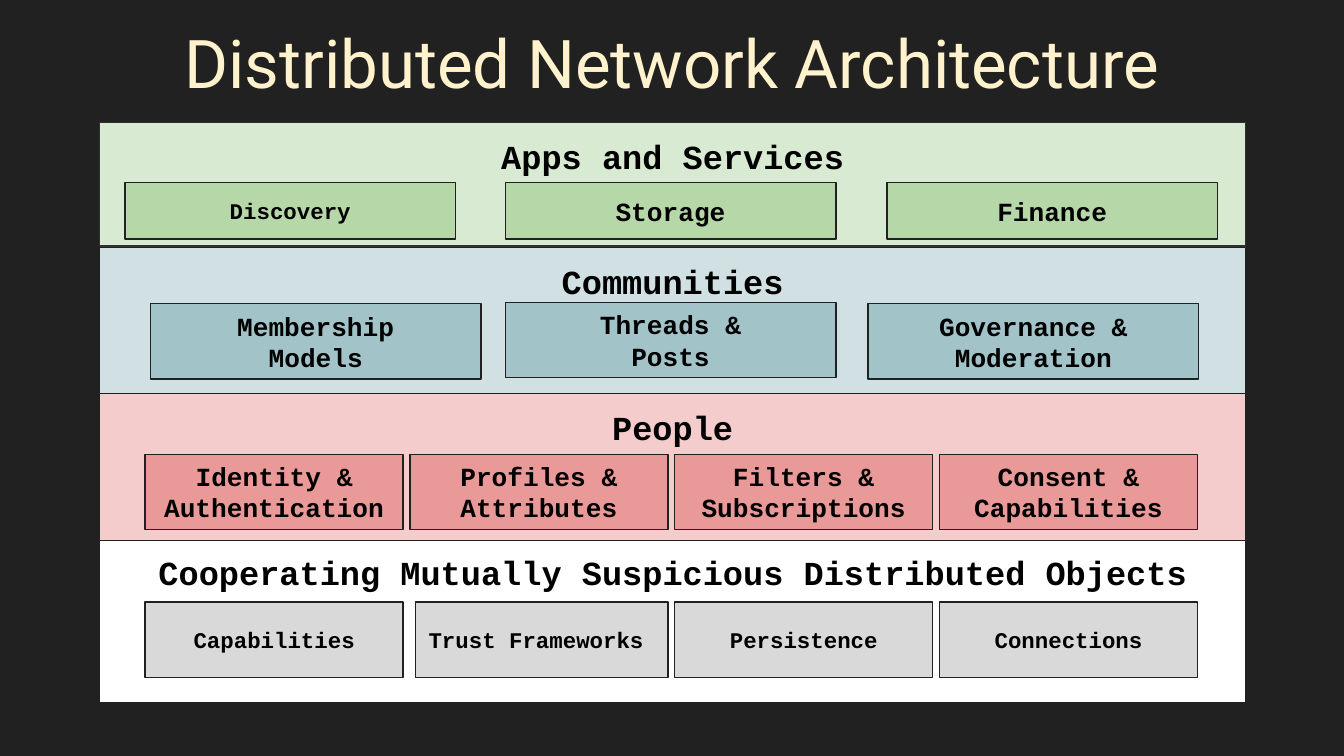
"""Build the layered network architecture slide."""
from dataclasses import dataclass

import pptx
import pptx.dml.color
import pptx.enum.shapes
import pptx.enum.text
import pptx.util

Inches = pptx.util.Inches
Align = pptx.enum.text.PP_ALIGN
Anchor = pptx.enum.text.MSO_ANCHOR
DARK = "212121"
MONO = "Courier New"


@dataclass
class Box:
    text: str
    left: float
    width: float
    size: int = 14
    align: Align = Align.CENTER
    shift: float = 0


@dataclass
class Layer:
    name: str
    top: float
    height: float
    fill: str
    tint: str
    row: float
    tall: float
    boxes: list[Box]
    edge: str = DARK


def color(code: str) -> pptx.dml.color.RGBColor:
    return pptx.dml.color.RGBColor.from_string(code)


def style(shape, text: str, size: int, font: str, ink: str, bold: bool,
          align: Align, anchor: Anchor) -> None:
    frame = shape.text_frame
    frame.text = text
    frame.word_wrap = True
    frame.auto_size = pptx.enum.text.MSO_AUTO_SIZE.NONE
    frame.vertical_anchor = anchor
    frame.margin_left = frame.margin_right = Inches(0.1)
    frame.margin_top = frame.margin_bottom = Inches(0.1)
    for para in frame.paragraphs:
        para.alignment = align
        for run in para.runs:
            run.font.size = pptx.util.Pt(size)
            run.font.name = font
            run.font.bold = bold
            run.font.color.rgb = color(ink)


def outline(shape, edge: str) -> None:
    shape.line.color.rgb = color(edge)
    shape.line.width = pptx.util.Pt(0.75)


def block(slide, left: float, top: float, width: float, height: float,
          fill: str, edge: str = DARK):
    shape = slide.shapes.add_shape(
        pptx.enum.shapes.MSO_SHAPE.RECTANGLE,
        Inches(left), Inches(top), Inches(width), Inches(height))
    shape.shadow.inherit = False
    shape.fill.solid()
    shape.fill.fore_color.rgb = color(fill)
    outline(shape, edge)
    return shape


def draw(slide, layer: Layer) -> None:
    band = block(slide, 0.74, layer.top, 8.53, layer.height, layer.fill, layer.edge)
    style(band, layer.name, 18, MONO, "000000", True, Align.CENTER, Anchor.TOP)
    for box in layer.boxes:
        shape = block(slide, box.left, layer.row + box.shift, box.width,
                      layer.tall, layer.tint)
        style(shape, box.text, box.size, MONO, "000000", True,
              box.align, Anchor.MIDDLE)


def main() -> None:
    wide, slim = 2.46, 1.92
    cols = [1.08 + 1.97 * i for i in range(4)]
    people = ["Identity &\nAuthentication", "Profiles &\nAttributes",
              "Filters &\vSubscriptions", "Consent &\nCapabilities"]
    layers = [
        Layer("Cooperating Mutually Suspicious Distributed Objects",
              4.01, 1.22, "FFFFFF", "D9D9D9", 4.48, 0.56, [
                  Box("Capabilities", cols[0], slim, 12),
                  Box("Trust Frameworks", 3.09, 1.88, 12, Align.LEFT),
                  Box("Persistence", cols[2], slim, 12),
                  Box("Connections", cols[3], slim, 12)]),
        Layer("Apps and Services", 0.91, 0.92, "D9EAD3", "B6D7A8", 1.36, 0.42, [
            Box("Discovery", 0.93, wide, 12),
            Box("Storage", 3.76, wide),
            Box("Finance", 6.6, wide)], "303030"),
        Layer("Communities", 1.84, 1.09, "D0E0E3", "A2C4C9", 2.26, 0.56, [
            Box("Membership\nModels", 1.12, wide),
            Box("Threads &\nPosts", 3.76, wide, shift=-0.01),
            Box("Governance &\nModeration", 6.46, wide)]),
        Layer("People", 2.93, 1.09, "F4CCCC", "EA9999", 3.38, 0.56,
              [Box(text, left, slim) for text, left in zip(people, cols)]),
    ]

    deck = pptx.Presentation()
    deck.slide_width = Inches(10)
    deck.slide_height = deck.slide_width * 9 // 16
    slide = deck.slides.add_slide(deck.slide_layouts[5])
    slide.background.fill.solid()
    slide.background.fill.fore_color.rgb = color(DARK)

    title = slide.shapes.title
    title.left, title.top = Inches(0), Inches(0)
    title.width, title.height = Inches(10), Inches(0.92)
    outline(title, DARK)
    style(title, "Distributed Network Architecture", 36, "Roboto", "FFF2CC",
          False, Align.CENTER, Anchor.MIDDLE)

    for layer in layers:
        draw(slide, layer)
    deck.save("out.pptx")


if __name__ == "__main__":
    main()
